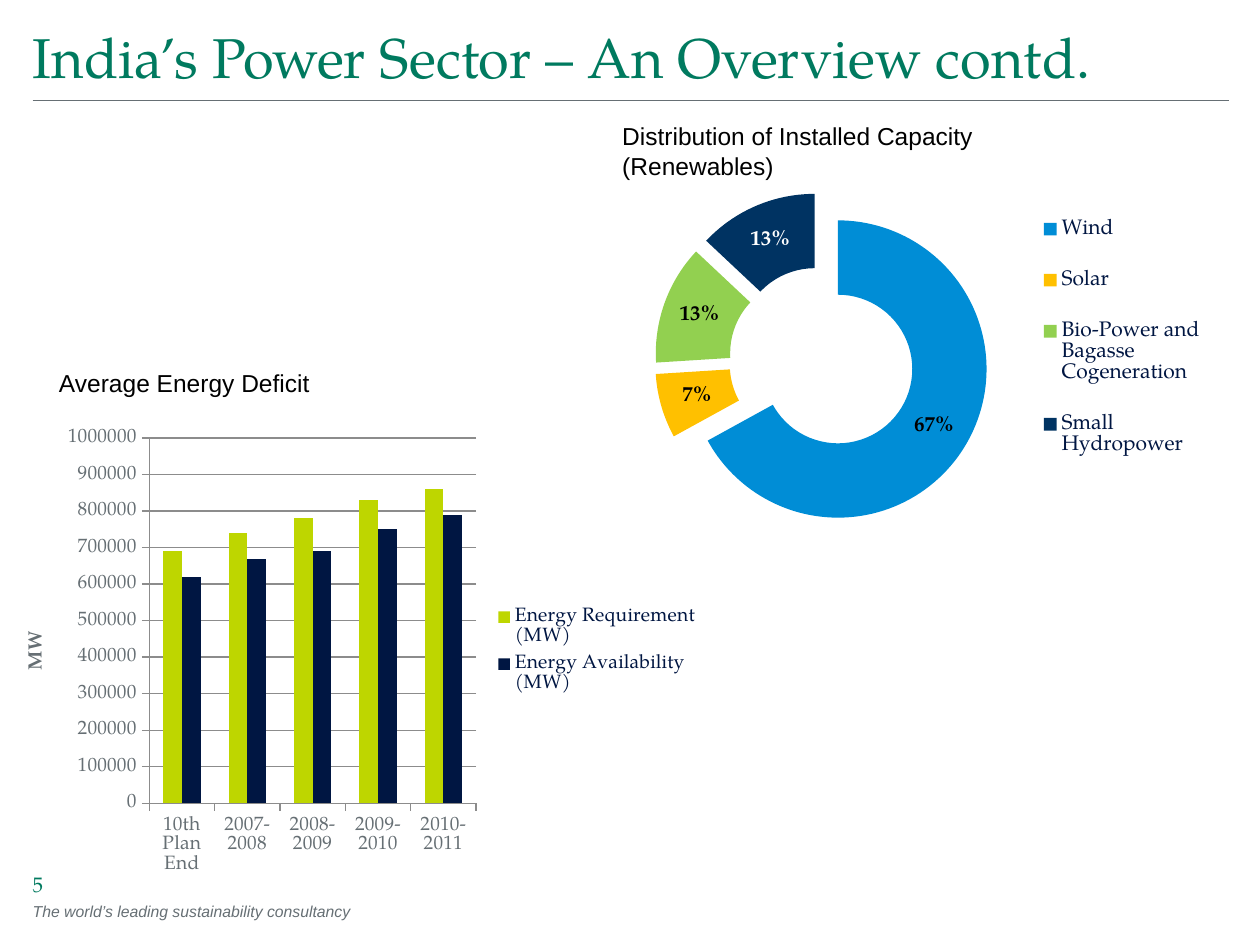
import dataclasses

import pptx
import pptx.chart.data
import pptx.dml.color
import pptx.enum.chart
import pptx.enum.shapes
import pptx.enum.text
import pptx.oxml
import pptx.oxml.ns
import pptx.util

qn = pptx.oxml.ns.qn
nsdecls = pptx.oxml.ns.nsdecls
Inches = pptx.util.Inches
ANCHOR = pptx.enum.text.MSO_ANCHOR


@dataclasses.dataclass(frozen=True)
class Theme:
    serif: str = "TeX Gyre Pagella"
    sans: str = "Arial"
    green: str = "007A5F"
    grey: str = "666F74"
    grid: str = "8C8C8C"
    navy: str = "001642"
    lime: str = "BED600"
    black: str = "000000"
    white: str = "FFFFFF"
    slices: tuple = ("008DD6", "FFC000", "92D050", "003362")
    title: int = 32
    heading: int = 14
    ring: int = 12
    columns: int = 11
    number: int = 12
    footer: int = 9


THEME = Theme()
WIDTH, HEIGHT = 10, 7.5
MARGIN = 0.26
RIGHT = 9.75


def rgb(value):
    return pptx.dml.color.RGBColor.from_string(value)


def style_font(font, name, size, color, bold=False, italic=False):
    font.name = name
    font.size = pptx.util.Pt(size)
    font.color.rgb = rgb(color)
    font.bold = bold
    font.italic = italic


def set_text(s, text, name, size, color, anchor, insets, italic=False):
    tf = s.text_frame
    tf.text = text
    tf.word_wrap = True
    tf.auto_size = pptx.enum.text.MSO_AUTO_SIZE.NONE
    tf.vertical_anchor = anchor
    tf.margin_left, tf.margin_top, tf.margin_right, tf.margin_bottom = map(Inches, insets)
    p = tf.paragraphs[0]
    p.alignment = pptx.enum.text.PP_ALIGN.LEFT
    style_font(p.runs[0].font, name, size, color, italic=italic)


def add_text(slide, box, *args, **kwargs):
    set_text(slide.shapes.add_textbox(*map(Inches, box)), *args, **kwargs)


def add_heading(slide, box, text):
    add_text(slide, box, text, THEME.sans, THEME.heading, THEME.black,
             ANCHOR.MIDDLE, (0.1, 0.05, 0.1, 0.05))


def add_title(slide, text):
    s = slide.shapes.title
    s.left, s.top, s.width, s.height = map(Inches, (MARGIN, 0.18, RIGHT - MARGIN, 0.6))
    set_text(s, text, THEME.serif, THEME.title, THEME.green, ANCHOR.TOP, (0, 0, 0, 0.05))


def add_rule(slide, y):
    line = slide.shapes.add_connector(
        pptx.enum.shapes.MSO_CONNECTOR.STRAIGHT,
        Inches(MARGIN), Inches(y), Inches(RIGHT), Inches(y))
    line.line.color.rgb = rgb(THEME.grey)
    line.line.width = pptx.util.Pt(0.5)
    line._element.spPr.append(pptx.oxml.parse_xml(f"<a:effectLst {nsdecls('a')}/>"))


def set_layout(parent, after, parts, inner=False):
    for old in parent.findall(qn("c:layout")):
        parent.remove(old)
    target = '<c:layoutTarget val="inner"/>' if inner else ""
    modes = '<c:xMode val="edge"/><c:yMode val="edge"/>'
    sizes = "".join(f'<c:{key} val="{value}"/>' for key, value in zip("xywh", parts))
    layout = pptx.oxml.parse_xml(
        f"<c:layout {nsdecls('c')}><c:manualLayout>"
        f"{target}{modes}{sizes}</c:manualLayout></c:layout>")
    previous = parent.find(qn(after)) if after else None
    if previous is None:
        parent.insert(0, layout)
    else:
        previous.addnext(layout)


def add_chart(slide, kind, box, categories, series, size, plot_share, legend_share):
    data = pptx.chart.data.CategoryChartData()
    data.categories = categories
    for name, values in series:
        data.add_series(name, values)
    chart = slide.shapes.add_chart(kind, *map(Inches, box), data).chart
    style_font(chart.font, THEME.serif, size, THEME.grey)
    chart.has_title = False
    chart.has_legend = True
    legend = chart.legend
    legend.position = pptx.enum.chart.XL_LEGEND_POSITION.RIGHT
    legend.include_in_layout = False
    style_font(legend.font, THEME.serif, size, THEME.navy)
    set_layout(legend._element, "c:legendPos", legend_share)
    set_layout(chart._chartSpace.chart.plotArea, None, plot_share, inner=True)
    return chart


def add_capacity_ring(slide, box):
    chart = add_chart(
        slide, pptx.enum.chart.XL_CHART_TYPE.DOUGHNUT_EXPLODED, box,
        ("Wind", "Solar", "Bio-Power and Bagasse Cogeneration", "Small Hydropower"),
        [("Series 1", (67, 7, 13, 13))], THEME.ring,
        (0.1, 0.11, 0.5, 0.8), (0.7, 0.05, 0.29, 0.8))
    ring = chart.plots[0].series[0]
    labels = ring.data_labels
    labels.show_percentage = True
    labels.show_value = False
    style_font(labels.font, THEME.serif, THEME.ring, THEME.black, bold=True)
    for old in ring._element.findall(qn("c:explosion")):
        ring._element.remove(old)
    for i, color in enumerate(THEME.slices):
        fill = ring.points[i].format.fill
        fill.solid()
        fill.fore_color.rgb = rgb(color)
    for point in ring._element.findall(qn("c:dPt")):
        point.find(qn("c:spPr")).addprevious(
            pptx.oxml.parse_xml(f"<c:explosion {nsdecls('c')} val=\"25\"/>"))
    style_font(ring.points[3].data_label.font, THEME.serif, THEME.ring,
               THEME.white, bold=True)
    label = ring._element.find(f"{qn('c:dLbls')}/{qn('c:dLbl')}")
    label.find(qn("c:showVal")).set("val", "0")
    label.find(qn("c:showPercent")).set("val", "1")


def add_deficit_columns(slide, box):
    chart = add_chart(
        slide, pptx.enum.chart.XL_CHART_TYPE.COLUMN_CLUSTERED, box,
        ("10th Plan End", "2007-2008", "2008-2009", "2009-2010", "2010-2011"),
        [("Energy Requirement (MW)", (690000, 740000, 780000, 830000, 860000)),
         ("Energy Availability (MW)", (620000, 670000, 690000, 750000, 790000))],
        THEME.columns, (0.21, 0.04, 0.46, 0.79), (0.69, 0.39, 0.3, 0.22))
    plot = chart.plots[0]
    plot.gap_width = 150
    plot.vary_by_categories = False
    for series, color in zip(plot.series, (THEME.lime, THEME.navy)):
        series.format.fill.solid()
        series.format.fill.fore_color.rgb = rgb(color)
    axis = chart.value_axis
    axis.minimum_scale, axis.maximum_scale, axis.major_unit = 0, 1000000, 100000
    axis.has_major_gridlines = True
    for part in (axis, chart.category_axis, axis.major_gridlines):
        part.format.line.color.rgb = rgb(THEME.grid)
    tf = axis.axis_title.text_frame
    tf.text = "MW"
    style_font(tf.paragraphs[0].runs[0].font, THEME.serif, THEME.columns,
               THEME.grey, bold=True)
    tf._txBody.bodyPr.set("rot", "-5400000")
    tf._txBody.bodyPr.set("vert", "horz")
    set_layout(axis.axis_title._element, "c:tx", (0.03, 0.45))


def main():
    prs = pptx.Presentation()
    prs.slide_width, prs.slide_height = Inches(WIDTH), Inches(HEIGHT)
    slide = prs.slides.add_slide(prs.slide_layouts[5])
    add_rule(slide, 0.8)
    add_text(slide, (MARGIN, 7.11, 4.91, 0.25),
             "The world’s leading sustainability consultancy", THEME.sans,
             THEME.footer, THEME.grey, ANCHOR.TOP, (0, 0.05, 0, 0.05), italic=True)
    add_title(slide, "India’s Power Sector – An Overview contd.")
    add_text(slide, (MARGIN, 6.71, 1.16, 0.41), "5", THEME.serif,
             THEME.number, THEME.green, ANCHOR.BOTTOM, (0, 0, 0, 0))
    add_heading(slide, (4.84, 0.91, 4, 0.57),
                "Distribution of Installed Capacity (Renewables)")
    add_capacity_ring(slide, (4.84, 1.35, 4.81, 2.95))
    add_deficit_columns(slide, (0, 3.33, 5.64, 3.67))
    add_heading(slide, (0.37, 2.85, 4, 0.38), "Average Energy Deficit")
    prs.save("out.pptx")


if __name__ == "__main__":
    main()
